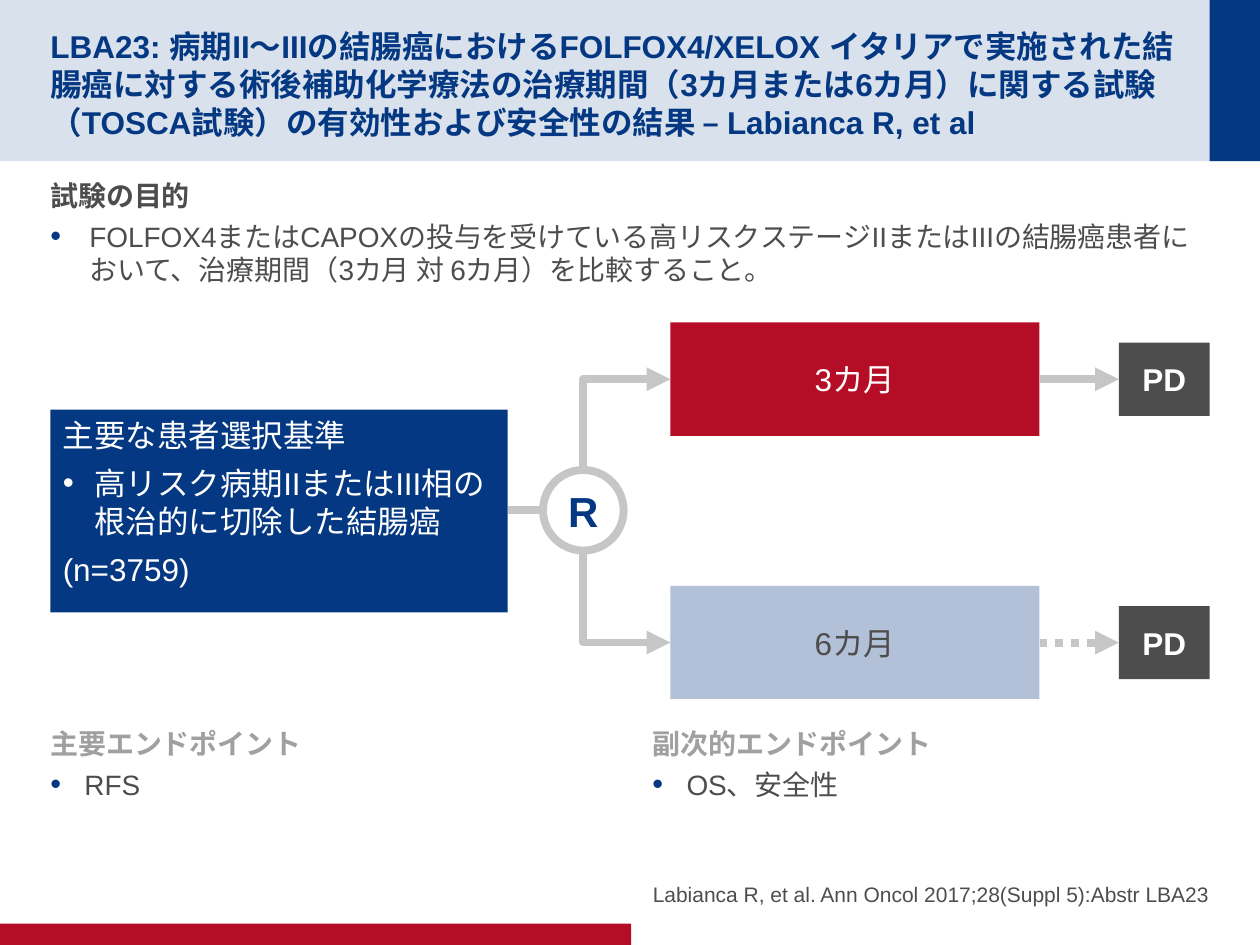
from dataclasses import dataclass

from lxml import etree
from pptx import Presentation
from pptx import util as u
from pptx.dml.color import RGBColor
from pptx.enum import dml, shapes, text
from pptx.oxml.ns import qn

PX = 9144  # 100 px to the inch


@dataclass(frozen=True)
class Theme:
    navy: str = "043882"
    red: str = "B60D27"
    pale: str = "B2C0D8"
    dark: str = "4D4D4D"
    line: str = "C6C6C6"
    muted: str = "A0A0A0"
    white: str = "FFFFFF"
    font: str = "Arial"
    title: int = 18
    body: int = 16
    box: int = 18
    letter: int = 24
    citation: int = 12
    stroke: float = 4.5


THEME = Theme()
RECT = shapes.MSO_SHAPE.RECTANGLE
MIDDLE = text.MSO_ANCHOR.MIDDLE
CENTER = text.PP_ALIGN.CENTER


def px(*values):
    return [u.Emu(round(value * PX)) for value in values]


def child(parent, tag, **attributes):
    return etree.SubElement(parent, qn(tag), attributes)


def add_block(slide, box, fill=None, kind=RECT):
    shape = slide.shapes.add_shape(kind, *px(*box))
    shape.shadow.inherit = False
    shape.line.fill.background()
    if fill:
        shape.fill.solid()
        shape.fill.fore_color.rgb = RGBColor.from_string(fill)
    else:
        shape.fill.background()
    return shape


def set_bullet(paragraph, indent, color):
    properties = paragraph._p.get_or_add_pPr()
    properties.set("marL", str(indent * PX))
    properties.set("indent", str(-indent * PX))
    child(child(properties, "a:buClr"), "a:srgbClr", val=color)
    child(properties, "a:buSzPct", val="100000" if color == THEME.white else "110000")
    child(properties, "a:buFont", typeface=THEME.font)
    child(properties, "a:buChar", char="•")


def write(shape, paragraphs, size, insets=(0, 5, 0, 5), anchor=text.MSO_ANCHOR.TOP,
          align=text.PP_ALIGN.LEFT, after=0, wrap=True):
    """Fill a shape with (text, color, bold, bullet indent) paragraphs."""
    frame = shape.text_frame
    left, top, right, bottom = px(*insets)
    formats = dict(margin_left=left, margin_top=top, margin_right=right,
                   margin_bottom=bottom, vertical_anchor=anchor, word_wrap=wrap)
    for name, value in formats.items():
        setattr(frame, name, value)
    for index, (words, color, bold, indent) in enumerate(paragraphs):
        paragraph = frame.add_paragraph() if index else frame.paragraphs[0]
        paragraph.alignment = align
        paragraph.space_after = u.Pt(after)
        if indent:
            set_bullet(paragraph, indent, THEME.white if color == THEME.white else THEME.navy)
        run = paragraph.add_run()
        run.text = words
        for name, value in dict(name=THEME.font, size=u.Pt(size), bold=bold).items():
            setattr(run.font, name, value)
        run.font.color.rgb = RGBColor.from_string(color)


def add_text(slide, box, paragraphs, size, **formats):
    write(slide.shapes.add_textbox(*px(*box)), paragraphs, size, **formats)


def add_line(slide, start, end, kind=shapes.MSO_CONNECTOR.STRAIGHT, arrow=True, dash=None):
    connector = slide.shapes.add_connector(kind, *px(*start, *end))
    connector.line.color.rgb = RGBColor.from_string(THEME.line)
    connector.line.width = u.Pt(THEME.stroke)
    if dash:
        connector.line.dash_style = dash
    if arrow:
        child(connector.line._get_or_add_ln(), "a:tailEnd", type="triangle")
    child(connector._element.spPr, "a:effectLst")
    return connector


def add_elbow(slide, start, end):
    """Arrow that leaves start vertically, turns once and reaches end horizontally."""
    (x1, y1), (x2, y2) = start, end
    center_x, center_y = (x1 + x2) / 2, (y1 + y2) / 2
    half_w, half_h = abs(y2 - y1) / 2, abs(x2 - x1) / 2
    upward = y2 < y1
    top, bottom = center_y - half_h, center_y + half_h
    connector = add_line(slide, (center_x + half_w, bottom if upward else top),
                         (center_x - half_w, top if upward else bottom),
                         shapes.MSO_CONNECTOR.ELBOW)
    properties = connector._element.spPr
    properties.find(qn("a:xfrm")).set("rot", str((90 if upward else 270) * 60000))
    properties.find(qn("a:prstGeom")).set("prst", "bentConnector2")


def add_header(slide, box, title):
    left, top, width, height = box
    band = add_block(slide, box, THEME.navy)
    color = band._element.spPr.find(qn("a:solidFill"))[0]
    child(color, "a:alpha", val="15000")
    add_block(slide, (left + width - 40, top, 40, height), THEME.navy)
    add_text(slide, (left + 40, top + 20, 901, height - 40),
             [(title, THEME.navy, True, 0)], THEME.title, insets=(0, 5, 0, 0), anchor=MIDDLE)


def add_section(slide, box, heading, item, color, indent, inset=0):
    add_text(slide, box, [(heading, color, True, 0), (item, THEME.dark, False, indent)],
             THEME.body, insets=(inset, 5, inset, 5), after=4)


def add_arm(slide, box, label, fill, color, dash=None):
    """Treatment box, followed by an arrow to its PD box."""
    left, top, width, height = box
    middle = top + height / 2
    end = left + width
    label_format = dict(insets=(10, 0, 10, 0), anchor=MIDDLE, align=CENTER)
    write(add_block(slide, box, fill), [(label, color, False, 0)], THEME.box, **label_format)
    outcome = add_block(slide, (end + 63, middle - 29, 72, 58), THEME.dark)
    write(outcome, [("PD", THEME.white, True, 0)], THEME.box, **label_format)
    add_line(slide, (end, middle), (end + 63, middle), dash=dash)


def add_trial_design(slide, box):
    left, top, width, height = box
    middle = top + 149
    criteria = add_block(slide, (left, top + 69, 363, 161), THEME.navy,
                         shapes.MSO_SHAPE.ROUNDED_RECTANGLE)
    criteria.adjustments[0] = 0
    write(criteria, [("主要な患者選択基準", THEME.white, False, 0),
                     ("高リスク病期IIまたはIII相の根治的に切除した結腸癌", THEME.white, False, 25),
                     ("(n=3759)", THEME.white, False, 0)],
          THEME.box, insets=(10, 5, 10, 5), after=6)

    circle_left, diameter = left + 391, 64
    circle_x, radius = circle_left + diameter / 2, diameter / 2
    add_line(slide, (left + 363, middle), (circle_left, middle), arrow=False)
    circle = add_block(slide, (circle_left, middle - radius, diameter, diameter),
                       kind=shapes.MSO_SHAPE.OVAL)
    circle.line.color.rgb = RGBColor.from_string(THEME.line)
    circle.line.width = u.Pt(THEME.stroke)
    write(circle, [("R", THEME.navy, True, 0)], THEME.letter, insets=(10, 5, 10, 5),
          anchor=MIDDLE, align=CENTER, wrap=False)

    arm_left, arm_height = left + 492, 90
    arms = [("3カ月", THEME.red, THEME.white, None, top, -1),
            ("6カ月", THEME.pale, THEME.dark, dml.MSO_LINE.ROUND_DOT,
             top + height - arm_height, 1)]
    for label, fill, color, dash, arm_top, side in arms:
        add_elbow(slide, (circle_x, middle + side * radius),
                  (arm_left, arm_top + arm_height / 2))
        add_arm(slide, (arm_left, arm_top, 293, arm_height), label, fill, color, dash)


def add_footer(slide, box, citation):
    left, top, width, height = box
    add_block(slide, (left, top + height - 17, 501, 17), THEME.red)
    add_text(slide, (left + 508, top, 452, 53), [(citation, THEME.dark, False, 0)],
             THEME.citation, insets=(0, 0, 0, 0), anchor=text.MSO_ANCHOR.BOTTOM,
             align=text.PP_ALIGN.RIGHT, after=4)


def main():
    presentation = Presentation()
    presentation.slide_width, presentation.slide_height = px(1000, 750)
    slide = presentation.slides.add_slide(presentation.slide_layouts[6])
    add_header(slide, (0, 0, 1000, 128),
               "LBA23: 病期II～IIIの結腸癌におけるFOLFOX4/XELOX イタリアで実施された結腸癌に対する"
               "術後補助化学療法の治療期間（3カ月または6カ月）に関する試験（TOSCA試験）の"
               "有効性および安全性の結果 – Labianca R, et al")
    add_section(slide, (40, 137, 920, 100), "試験の目的",
                "FOLFOX4またはCAPOXの投与を受けている高リスクステージIIまたはIIIの結腸癌患者において、"
                "治療期間（3カ月 対 6カ月）を比較すること。", THEME.dark, 31)
    add_trial_design(slide, (40, 256, 920, 299))
    endpoints = [(40, "主要エンドポイント", "RFS", 0),
                 (508, "副次的エンドポイント", "OS、安全性", 10)]
    for left, heading, item, inset in endpoints:
        add_section(slide, (left, 572, 452, 95), heading, item, THEME.muted, 27, inset)
    add_footer(slide, (0, 667, 1000, 83),
               "Labianca R, et al. Ann Oncol 2017;28(Suppl 5):Abstr LBA23")
    presentation.save("out.pptx")


if __name__ == "__main__":
    main()
